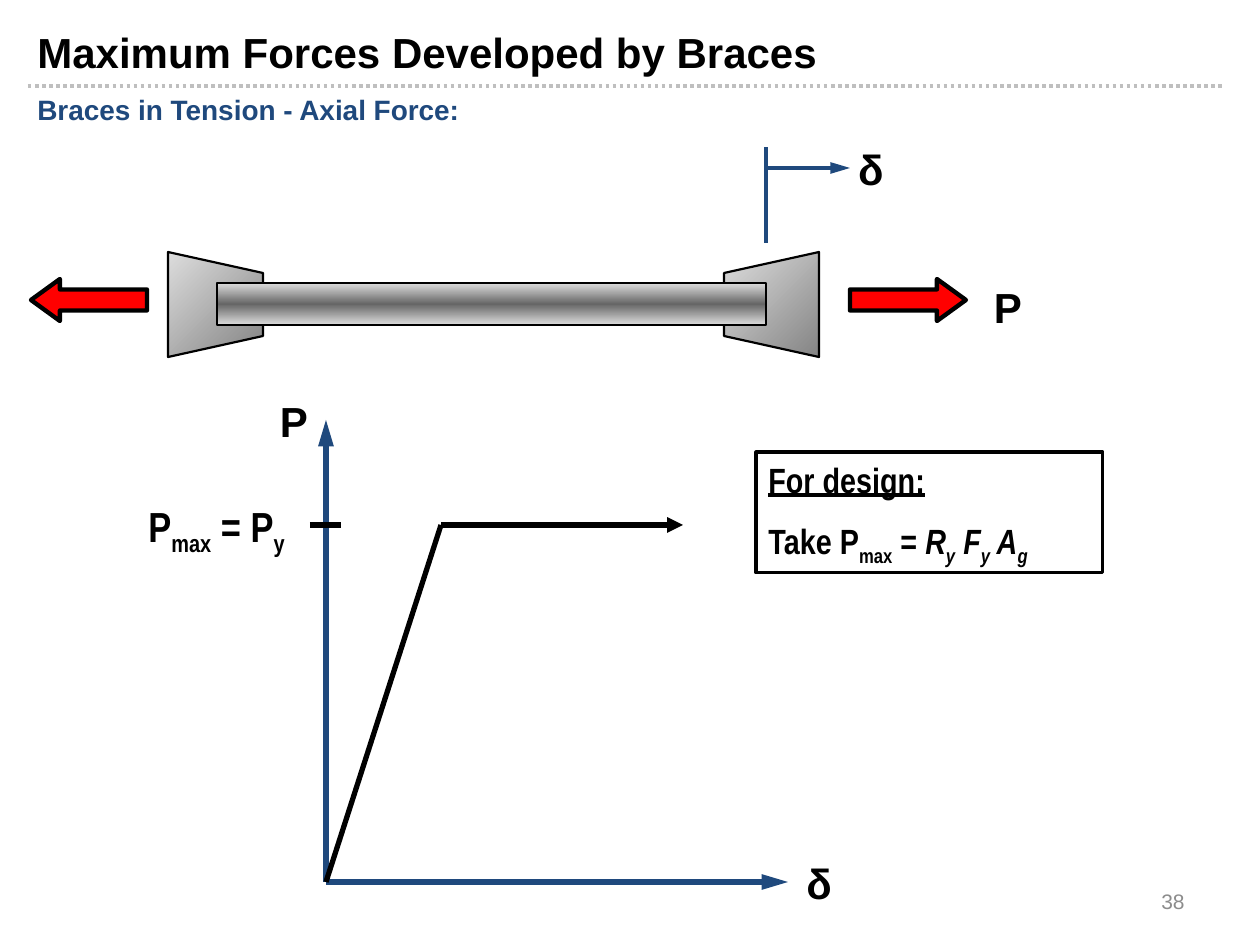
import copy
from dataclasses import dataclass
from typing import Any, Optional

import pptx
import pptx.dml.color
import pptx.enum.dml
import pptx.enum.shapes
import pptx.enum.text
import pptx.oxml
import pptx.oxml.ns
import pptx.util

RGBColor = pptx.dml.color.RGBColor
Align = pptx.enum.text.PP_ALIGN
Anchor = pptx.enum.text.MSO_ANCHOR
Dash = pptx.enum.dml.MSO_LINE
Preset = pptx.enum.shapes.MSO_SHAPE

BLACK = RGBColor(0, 0, 0)
NAVY = RGBColor(0x1F, 0x49, 0x7D)
RED = RGBColor(0xFF, 0, 0)
RULE_GRAY = RGBColor(0xBF, 0xBF, 0xBF)
NUMBER_GRAY = RGBColor(0x8C, 0x8C, 0x8C)
LIGHT_STEEL = RGBColor(0xDD, 0xDD, 0xDD)
PLATE_STEEL = RGBColor(0x84, 0x84, 0x84)
DARK_STEEL = RGBColor(0x66, 0x66, 0x66)

EMU_PER_PX = 914400 / 126
BRACE_END = 766
ORIGIN = (326, 882)
YIELD_POINT = (441, 525)


@dataclass
class Run:
    text: str
    subscript: bool = False
    italic: bool = False


@dataclass
class Label:
    left: int
    top: int
    width: int
    height: int
    paragraphs: list[list[Run]]
    size: int = 24
    font: str = "Arial"
    color: RGBColor = BLACK
    bold: bool = True
    align: Any = Align.LEFT
    anchor: Any = Anchor.TOP


@dataclass
class Line:
    start: tuple[int, int]
    end: tuple[int, int]
    color: RGBColor
    width: float
    arrow_length: Optional[str] = None
    dash: Any = None


def px(value: int) -> int:
    return round(value * EMU_PER_PX)


def symbol(text: str, left: int, top: int) -> Label:
    return Label(left, top, 126, 63, [[Run(text)]], align=Align.CENTER)


def outline(shape: Any, width: float) -> None:
    shape.shadow.inherit = False
    shape.line.color.rgb = BLACK
    shape.line.width = pptx.util.Pt(width)


def shade(shape: Any, colors: list[RGBColor], angle: int) -> None:
    shape.fill.gradient()
    shape.fill.gradient_angle = 360 - angle
    stop_list = shape._element.spPr.find(".//" + pptx.oxml.ns.qn("a:gsLst"))
    for _ in colors[2:]:
        stop_list.append(copy.deepcopy(stop_list[0]))
    for index, (stop, color) in enumerate(zip(shape.fill.gradient_stops, colors)):
        stop.position = index / (len(colors) - 1)
        stop.color.rgb = color


def draw_line(shapes: Any, line: Line) -> None:
    connector = shapes.add_connector(
        pptx.enum.shapes.MSO_CONNECTOR.STRAIGHT, *map(px, line.start + line.end)
    )
    connector.line.color.rgb = line.color
    connector.line.width = pptx.util.Pt(line.width)
    if line.dash is not None:
        connector.line.dash_style = line.dash
    properties = connector._element.spPr
    if line.arrow_length:
        arrowhead = pptx.oxml.parse_xml(
            f'<a:tailEnd {pptx.oxml.ns.nsdecls("a")} type="triangle" '
            f'w="med" len="{line.arrow_length}"/>'
        )
        connector.line._get_or_add_ln().append(arrowhead)
    properties.append(
        pptx.oxml.parse_xml(f'<a:effectLst {pptx.oxml.ns.nsdecls("a")}/>')
    )


def draw_label(shapes: Any, label: Label) -> Any:
    box = shapes.add_textbox(
        px(label.left), px(label.top), px(label.width), px(label.height)
    )
    frame = box.text_frame
    frame.word_wrap = True
    frame.vertical_anchor = label.anchor
    for index, runs in enumerate(label.paragraphs):
        paragraph = frame.add_paragraph() if index else frame.paragraphs[0]
        paragraph.alignment = label.align
        if index:
            paragraph.space_before = pptx.util.Pt(label.size * 0.55)
        paragraph.font.size = pptx.util.Pt(label.size)
        paragraph.font.name = label.font
        paragraph.font.bold = label.bold
        paragraph.font.color.rgb = label.color
        for part in runs:
            run = paragraph.add_run()
            run.text = part.text
            if part.italic:
                run.font.italic = True
            if part.subscript:
                run.font._element.set("baseline", "-25000")
    return box


def draw_plate(shapes: Any, outer: int, inner: int) -> None:
    builder = shapes.build_freeform(px(outer), px(252))
    corners = [(inner, 273), (inner, 336), (outer, 357)]
    builder.add_line_segments([(px(x), px(y)) for x, y in corners])
    plate = builder.convert_to_shape()
    shade(plate, [LIGHT_STEEL, PLATE_STEEL], 45)
    outline(plate, 1.25)


def draw_brace(shapes: Any) -> None:
    brace = shapes.add_group_shape().shapes
    draw_plate(brace, 168, 263)
    draw_plate(brace, 819, 724)
    bar = brace.add_shape(
        Preset.RECTANGLE, px(217), px(283), px(BRACE_END - 217), px(42)
    )
    shade(bar, [LIGHT_STEEL, DARK_STEEL, LIGHT_STEEL], 90)
    outline(bar, 1)


def draw_force(shapes: Any, preset: Any, left: int) -> None:
    arrow = shapes.add_shape(preset, px(left), px(279), px(116), px(42))
    arrow.adjustments[0] = 0.5
    arrow.adjustments[1] = 0.69
    arrow.fill.solid()
    arrow.fill.fore_color.rgb = RED
    outline(arrow, 2.5)


LINES = [
    Line((28, 86), (1225, 86), RULE_GRAY, 2, dash=Dash.ROUND_DOT),
    Line((BRACE_END, 243), (BRACE_END, 147), NAVY, 2.25),
    Line((BRACE_END, 168), (850, 168), NAVY, 2.25, "lg"),
]
AXES = [
    Line(ORIGIN, (326, 420), NAVY, 3, "lg"),
    Line(ORIGIN, (788, 882), NAVY, 3, "lg"),
]
CURVE = [
    Line(ORIGIN, YIELD_POINT, BLACK, 3),
    Line(YIELD_POINT, (683, 525), BLACK, 3, "med"),
    Line((310, 525), (341, 525), BLACK, 3),
]
LABELS = [
    Label(25, 20, 1131, 55, [[Run("Maximum Forces Developed by Braces")]]),
    Label(25, 86, 1131, 62, [[Run("Braces in Tension - Axial Force:")]],
          size=16, color=NAVY),
    symbol("P", 945, 275),
    symbol("δ", 808, 137),
    symbol("P", 231, 389),
    symbol("δ", 756, 851),
    Label(136, 494, 210, 63,
          [[Run("P"), Run("max", True), Run(" = P"), Run("y", True)]],
          font="Arial Narrow"),
    Label(903, 876, 294, 50, [[Run("38")]], size=12, color=NUMBER_GRAY,
          bold=False, align=Align.RIGHT, anchor=Anchor.MIDDLE),
]
DESIGN_NOTE = Label(
    756, 452, 347, 121,
    [
        [Run("For design:")],
        [Run("Take P"), Run("max", True), Run(" = "),
         Run("R", italic=True), Run("y", True, True),
         Run(" F", italic=True), Run("y", True, True),
         Run(" A", italic=True), Run("g", True, True)],
    ],
    size=20, font="Arial Narrow",
)


def main() -> None:
    presentation = pptx.Presentation()
    presentation.slide_width = px(1260)
    presentation.slide_height = px(945)
    slide = presentation.slides.add_slide(presentation.slide_layouts[6])
    shapes = slide.shapes
    draw_brace(shapes)
    draw_force(shapes, Preset.LEFT_ARROW, 31)
    draw_force(shapes, Preset.RIGHT_ARROW, 850)
    axes = shapes.add_group_shape().shapes
    for axis in AXES:
        draw_line(axes, axis)
    for line in LINES + CURVE:
        draw_line(shapes, line)
    for label in LABELS:
        draw_label(shapes, label)
    note = draw_label(shapes, DESIGN_NOTE)
    outline(note, 1.75)
    note.text_frame.paragraphs[0].font.underline = True
    presentation.save("out.pptx")


if __name__ == "__main__":
    main()
